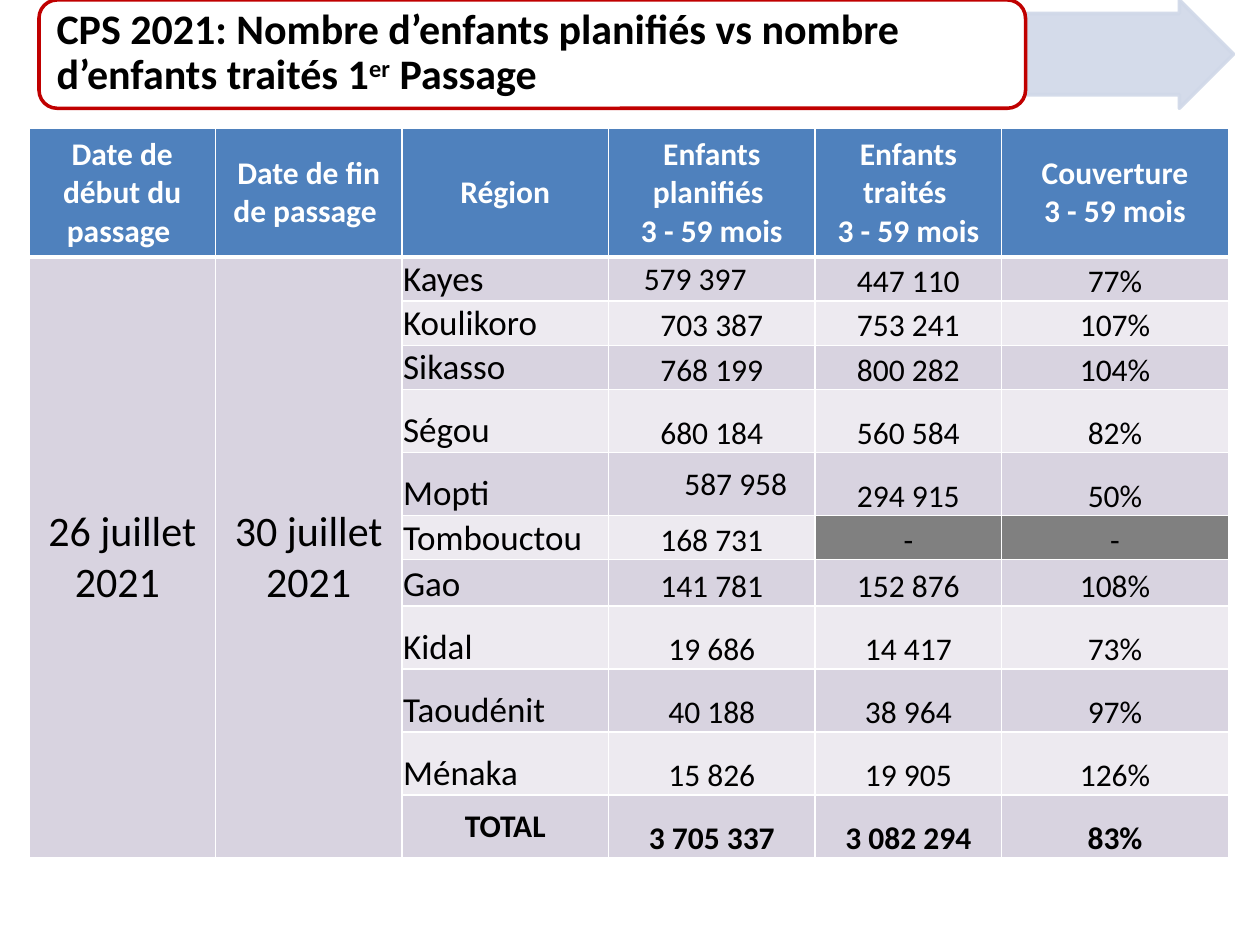
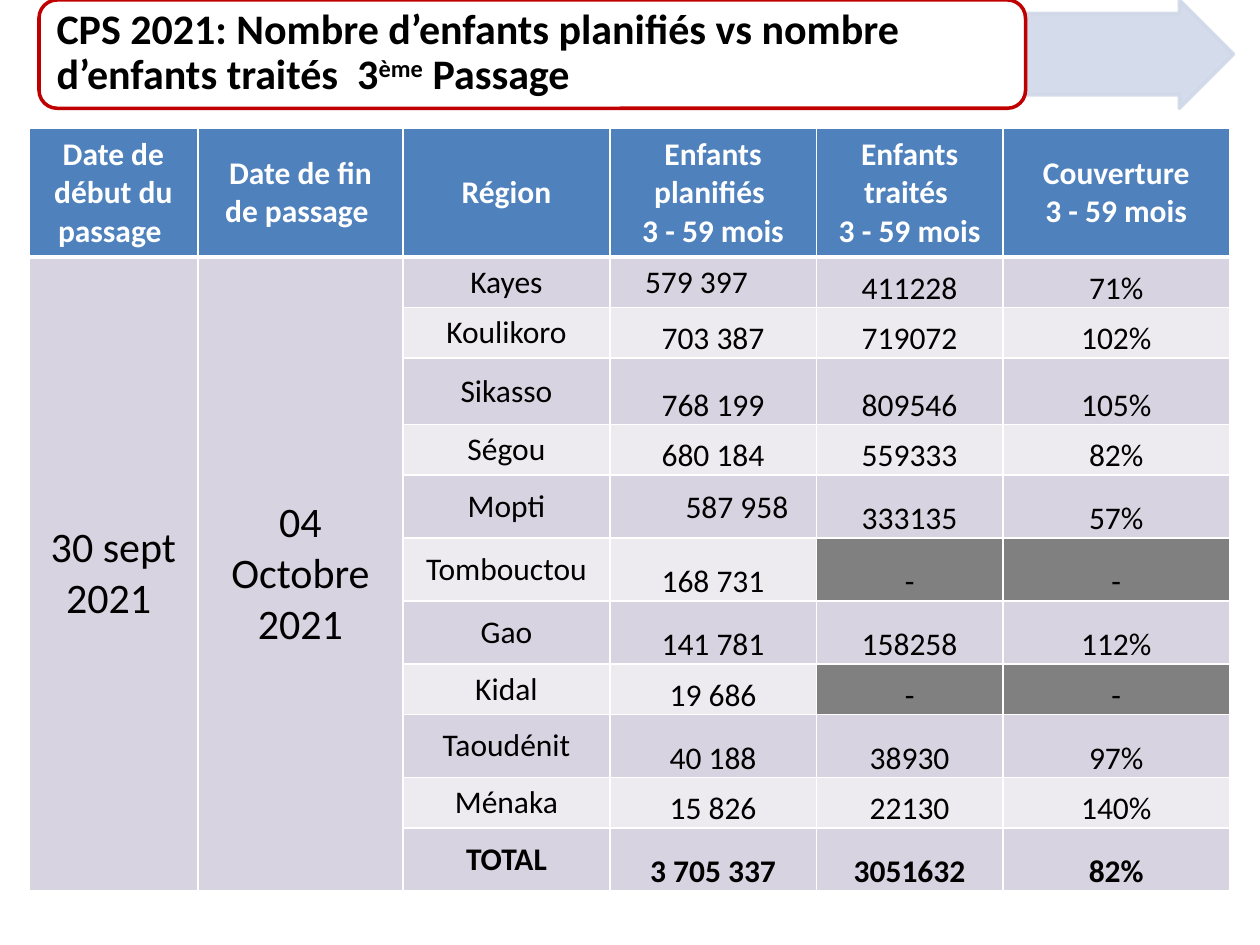
from lxml.etree import SubElement
from pptx import Presentation
from pptx.dml.color import RGBColor
from pptx.enum.shapes import MSO_SHAPE
from pptx.enum.text import MSO_ANCHOR, PP_ALIGN
from pptx.oxml.ns import qn
from pptx.util import Inches, Pt

BLUE, WHITE, BLACK, RED = "4F81BD", "FFFFFF", "000000", "C00000"
DARK, LIGHT, GREY, PALE = "D8D3E0", "EDEAF0", "808080", "D0D8E8"
MID, LOW = MSO_ANCHOR.MIDDLE, MSO_ANCHOR.BOTTOM
LEFT, MIDST = PP_ALIGN.LEFT, PP_ALIGN.CENTER

HEADS = ["Date de début du passage ", "Date de fin de passage ", "Région",
         "Enfants planifiés \n3 - 59 mois", "Enfants traités \n3 - 59 mois",
         "Couverture\n3 - 59 mois"]
ZONES = ["Kayes", "Koulikoro", "Sikasso", "Ségou", "Mopti", "Tombouctou",
         "Gao", "Kidal", "Taoudénit", "Ménaka", "TOTAL"]
PLANS = ["579 397", "703 387", "768 199", "680 184", "587 958", "168 731",
         "141 781", "19 686", "40 188", "15 826", "3 705 337"]
TIGHT = {"margin_left": Inches(0.01), "margin_top": Inches(0.01),
         "margin_right": Inches(0.01), "margin_bottom": 0}
SHIFTS = {"Kayes": (LEFT, 0.28), "Mopti": (MIDST, 0.39)}

ROUNDS = [
    {"title": ("CPS 2021: Nombre d’enfants planifiés vs nombre d’enfants traités 1", "er"),
     "dates": ["26 juillet 2021 ", "30 juillet 2021"],
     "cols": [1.48, 1.48, 1.64, 1.64, 1.48, 1.8],
     "rows": [1.02, 0.35, 0.35, 0.35, 0.5, 0.5, 0.35, 0.37, 0.5, 0.5, 0.5, 0.5],
     "zone": {"size": 20, "align": LEFT, "anchor": LOW, "edges": TIGHT},
     "done": ["447 110", "753 241", "800 282", "560 584", "294 915", "-",
              "152 876", "14 417", "38 964", "19 905", "3 082 294"],
     "rates": ["77%", "107%", "104%", "82%", "50%", "-",
               "108%", "73%", "97%", "126%", "83%"]},
    {"title": ("CPS 2021: Nombre d’enfants planifiés vs nombre d’enfants traités  3", "ème"),
     "dates": ["30 sept 2021 ", "04 Octobre 2021"],
     "cols": [1.34, 1.63, 1.64, 1.64, 1.48, 1.8],
     "rows": [1.02, 0.4, 0.4, 0.53, 0.4, 0.5, 0.5, 0.5, 0.4, 0.5, 0.4, 0.5],
     "zone": {},
     "done": ["411228", "719072", "809546", "559333", "333135", "-",
              "158258", "-", "38930", "22130", "3051632"],
     "rates": ["71%", "102%", "105%", "82%", "57%", "-",
               "112%", "-", "97%", "140%", "82%"]},
]


def tint(code):
    return RGBColor.from_string(code)


def assign(item, vals):
    for name, val in vals.items():
        setattr(item, name, val)


def style(run, size, color=BLACK, bold=False):
    assign(run.font, {"name": "Calibri", "size": Pt(size), "bold": bold})
    run.font.color.rgb = tint(color)


def border(cell, widths):
    props = cell._tc.get_or_add_tcPr()
    for side, width in zip("LRTB", widths):
        line = SubElement(props, qn(f"a:ln{side}"), w=str(Pt(width)))
        fill = SubElement(line, qn("a:solidFill"))
        SubElement(fill, qn("a:srgbClr"), val=WHITE)


def paint(cell, color, widths):
    border(cell, widths)
    cell.fill.solid()
    cell.fill.fore_color.rgb = tint(color)


def write(cell, text, size=18, color=BLACK, bold=False, align=MIDST,
          anchor=MID, edges=None):
    assign(cell, {"vertical_anchor": anchor, **(edges or {})})
    para = cell.text_frame.paragraphs[0]
    assign(para, {"text": text, "alignment": align})
    for run in para.runs:
        style(run, size, color, bold)


def add_grid(slide, data):
    cols, rows = data["cols"], data["rows"]
    grid = slide.shapes.add_table(len(rows), len(cols), Inches(0.23), Inches(1.02),
                                  Inches(sum(cols)), Inches(sum(rows))).table
    assign(grid, {"first_row": False, "horz_banding": False})
    for col, width in zip(grid.columns, cols):
        col.width = Inches(width)
    for row, height in zip(grid.rows, rows):
        row.height = Inches(height)

    for pos, text in enumerate(HEADS):
        paint(grid.cell(0, pos), BLUE, (1, 1, 1, 3))
        write(grid.cell(0, pos), text, color=WHITE, bold=True)

    lines = zip(ZONES, PLANS, data["done"], data["rates"])
    for num, (zone, plan, done, rate) in enumerate(lines, 1):
        band = DARK if num % 2 else LIGHT
        last = zone == "TOTAL"
        gap = GREY if done == "-" else band
        for pos, color in enumerate([DARK, DARK, band, band, gap, gap]):
            paint(grid.cell(num, pos), color, (1, 1, 3 if num == 1 else 1, 1))
        write(grid.cell(num, 2), zone, bold=last, **({} if last else data["zone"]))
        align, shift = SHIFTS.get(zone, (MIDST, 0.01))
        write(grid.cell(num, 3), plan, bold=last, align=align,
              anchor=MID if zone in SHIFTS else LOW,
              edges={**TIGHT, "margin_left": Inches(shift)})
        for pos, text in enumerate([done, rate], 4):
            write(grid.cell(num, pos), text, bold=last, anchor=LOW, edges=TIGHT)

    for pos, date in enumerate(data["dates"]):
        grid.cell(1, pos).merge(grid.cell(len(rows) - 1, pos))
        write(grid.cell(1, pos), date, size=24)


def add_form(slide, kind, left, width, fill, edge):
    form = slide.shapes.add_shape(kind, Inches(left), 0, Inches(width), Inches(0.86))
    form.shadow.inherit = False
    form.fill.solid()
    form.fill.fore_color.rgb = tint(fill)
    form.line.color.rgb = tint(edge)
    form.line.width = Pt(2)
    return form


def add_title(slide, lead, rank):
    arrow = add_form(slide, MSO_SHAPE.RIGHT_ARROW, 8.15, 1.64, PALE, PALE)
    arrow.adjustments[0] = 0.75
    arrow.adjustments[1] = 0.5
    for node in arrow._element.spPr.iter(qn("a:srgbClr")):
        SubElement(node, qn("a:alpha"), val="90000")
    add_form(slide, MSO_SHAPE.ROUNDED_RECTANGLE, 0.31, 7.83, WHITE, RED)

    box = slide.shapes.add_textbox(Inches(0.35), Inches(0.04), Inches(7.75), Inches(0.77))
    assign(box.text_frame, {"word_wrap": True, "vertical_anchor": MID})
    para = box.text_frame.paragraphs[0]
    para.line_spacing = 0.9
    for text in (lead, rank, " Passage"):
        run = para.add_run()
        run.text = text
        style(run, 24, bold=True)
        if text == rank:
            run._r.get_or_add_rPr().set("baseline", "30000")


def main():
    deck = Presentation()
    assign(deck, {"slide_width": Inches(10), "slide_height": Inches(7.5)})
    for data in ROUNDS:
        slide = deck.slides.add_slide(deck.slide_layouts[6])
        add_grid(slide, data)
        add_title(slide, *data["title"])
    deck.save("out.pptx")


if __name__ == "__main__":
    main()
